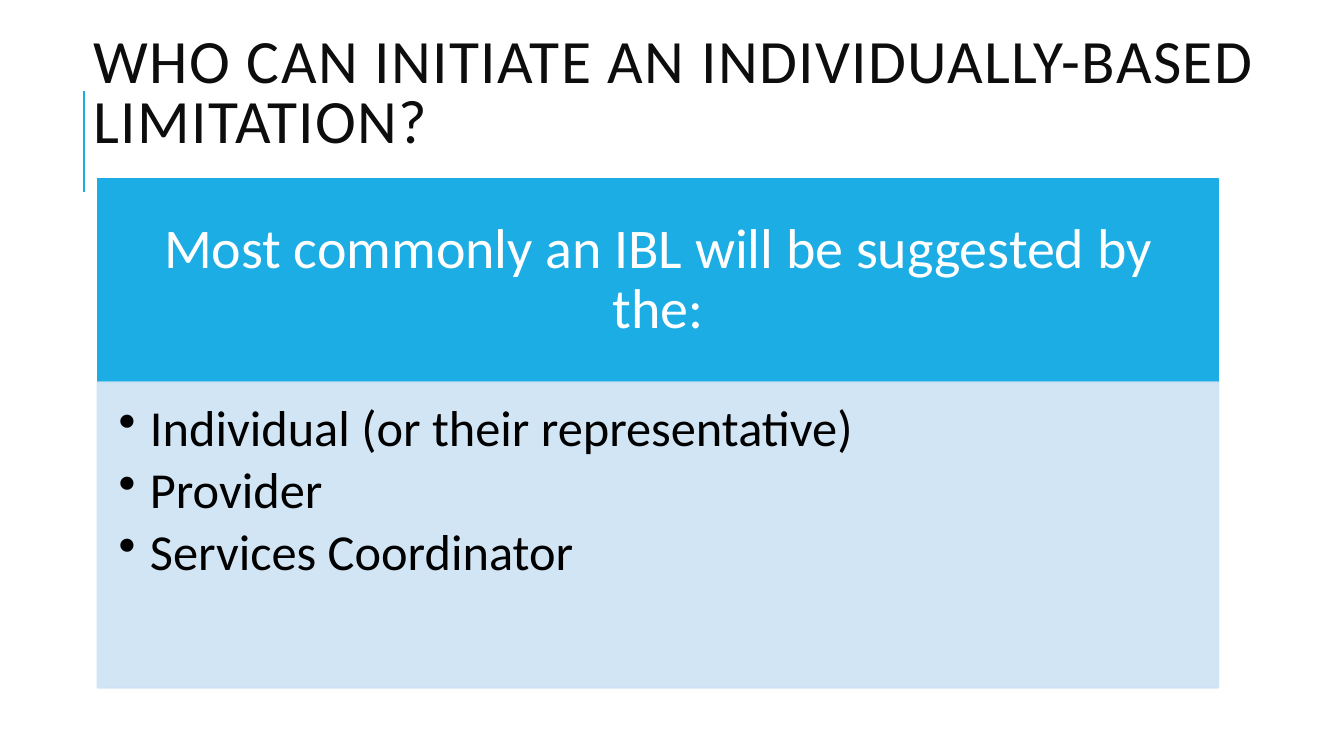
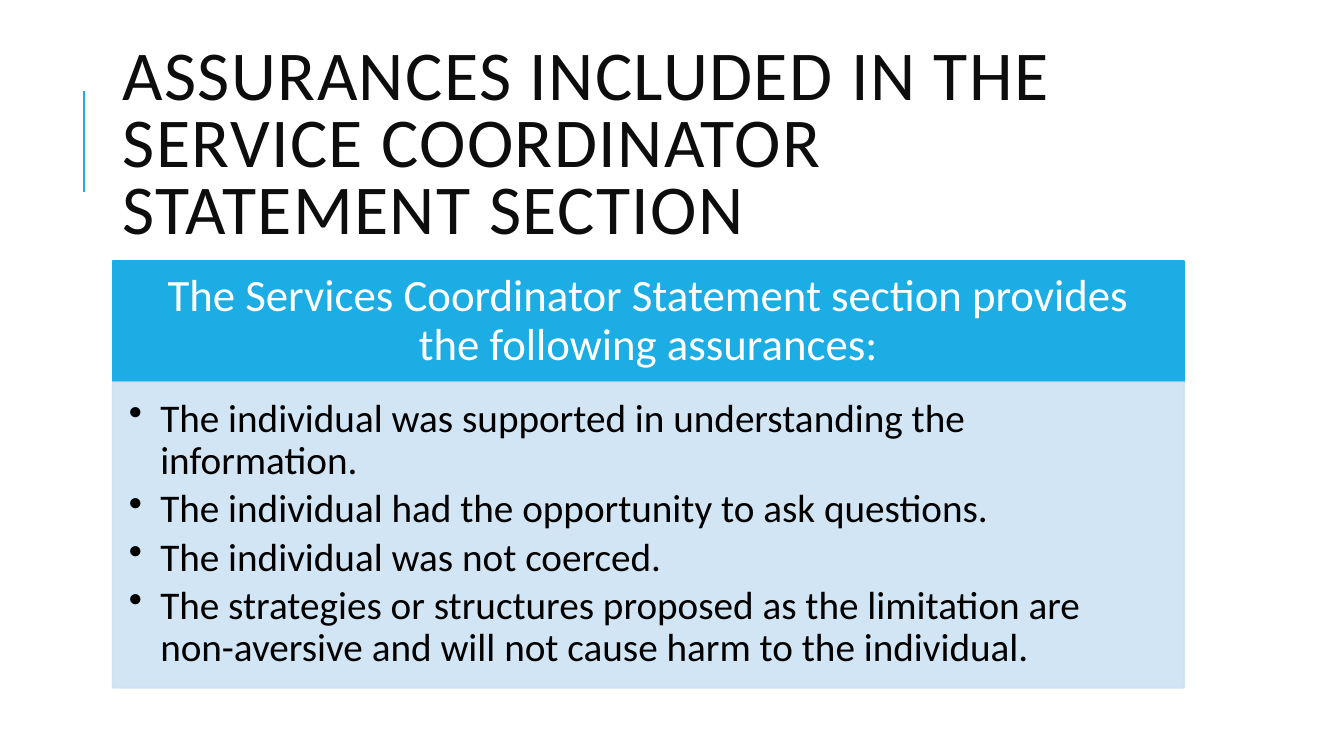
from lxml.etree import SubElement
from pptx import Presentation
from pptx.dml.color import RGBColor
from pptx.enum.shapes import MSO_CONNECTOR as CONNECTOR, MSO_SHAPE as SHAPE
from pptx.enum.text import MSO_ANCHOR as ANCHOR, PP_ALIGN as ALIGN
from pptx.oxml.ns import qn
from pptx.util import Cm, Pt

FONT = "Calibri"
ACCENT, PALE, INK, BLACK, WHITE = "1CADE4", "CDE3F5", "0D0D0D", "000000", "FFFFFF"
BODY_TOP, BODY_HEIGHT = 9.63, 7.7
BULLET_INDENT = Cm(0.79)

SLIDES = [
    {
        "title": "WHO CAN INITIATE AN INDIVIDUALLY-BASED LIMITATION?",
        "title_at": (2.11, 0.33, 30.68, 4.17),
        "title_size": 44,
        "left": 2.46, "width": 28.24, "header_top": 4.5,
        "header": "Most commonly an IBL will be suggested by the:",
        "header_size": 40, "header_insets": (0.79, 0.46, 0.79, 0.46),
        "bullets": [
            "Individual (or their representative)",
            "Provider",
            "Services Coordinator",
        ],
        "bullet_size": 36, "bullet_insets": (0.53, 0.53, 0.71, 0.81),
    },
    {
        "title": "ASSURANCES INCLUDED IN THE SERVICE COORDINATOR STATEMENT SECTION",
        "title_at": (2.84, 1.63, 27, 4.17),
        "title_size": 50,
        "left": 2.84, "width": 27, "header_top": 6.58,
        "header": "The Services Coordinator Statement section provides the following assurances:",
        "header_size": 32, "header_insets": (0.64, 0.36, 0.64, 0.36),
        "bullets": [
            "The individual was supported in understanding the information.",
            "The individual had the opportunity to ask questions.",
            "The individual was not coerced.",
            "The strategies or structures proposed as the limitation are "
            "non-aversive and will not cause harm to the individual.",
        ],
        "bullet_size": 28, "bullet_insets": (0.41, 0.41, 0.56, 0.61),
    },
]


def rgb(code):
    return RGBColor.from_string(code)


def write(box, lines, size, color, spacing, anchor, insets, bullets=False):
    frame = box.text_frame
    frame.word_wrap = True
    frame.vertical_anchor = anchor
    (frame.margin_left, frame.margin_top,
     frame.margin_right, frame.margin_bottom) = [Cm(inset) for inset in insets]
    frame.text = "\n".join(lines)
    for para in frame.paragraphs:
        para.alignment = ALIGN.LEFT
        para.line_spacing = spacing
        if bullets:
            para.space_after = Pt(round(size * 0.15, 1))
            properties = para._p.get_or_add_pPr()
            properties.set("marL", str(BULLET_INDENT))
            properties.set("indent", str(-BULLET_INDENT))
            SubElement(properties, qn("a:buChar")).set("char", "•")
        para.font.name = FONT
        para.font.size = Pt(size)
        para.font.color.rgb = rgb(color)
    return frame.paragraphs


deck = Presentation()
deck.slide_width, deck.slide_height = Cm(33.87), Cm(19.05)

for content in SLIDES:
    page = deck.slides.add_slide(deck.slide_layouts[6])

    rule = page.shapes.add_connector(
        CONNECTOR.STRAIGHT, Cm(2.11), Cm(4.83), Cm(2.11), Cm(2.29))
    rule.line.color.rgb = rgb(ACCENT)
    rule.line.width = Pt(1.5)
    SubElement(rule._element.spPr, qn("a:effectLst"))

    title = page.shapes.add_textbox(*[Cm(length) for length in content["title_at"]])
    [para] = write(title, [content["title"]], content["title_size"], INK, 0.8,
                   ANCHOR.MIDDLE, (0.25, 0.13, 0.25, 0.13))
    for span in para.runs:
        span._r.get_or_add_rPr().set("spc", "100")

    panels = []
    for top, height, color in [
        (content["header_top"], BODY_TOP - content["header_top"], ACCENT),
        (BODY_TOP, BODY_HEIGHT, PALE),
    ]:
        panel = page.shapes.add_shape(
            SHAPE.RECTANGLE, Cm(content["left"]), Cm(top), Cm(content["width"]), Cm(height))
        panel.shadow.inherit = False
        panel.fill.solid()
        panel.fill.fore_color.rgb = rgb(color)
        panel.line.color.rgb = rgb(color)
        panel.line.width = Pt(1.25)
        panels.append(panel)
    header, body = panels

    for tint in body._element.spPr.iter(qn("a:srgbClr")):
        SubElement(tint, qn("a:alpha")).set("val", "90000")

    [para] = write(header, [content["header"]], content["header_size"], WHITE, 0.9,
                   ANCHOR.MIDDLE, content["header_insets"])
    para.alignment = ALIGN.CENTER
    write(body, content["bullets"], content["bullet_size"], BLACK, 0.9,
          ANCHOR.TOP, content["bullet_insets"], bullets=True)

deck.save("out.pptx")
